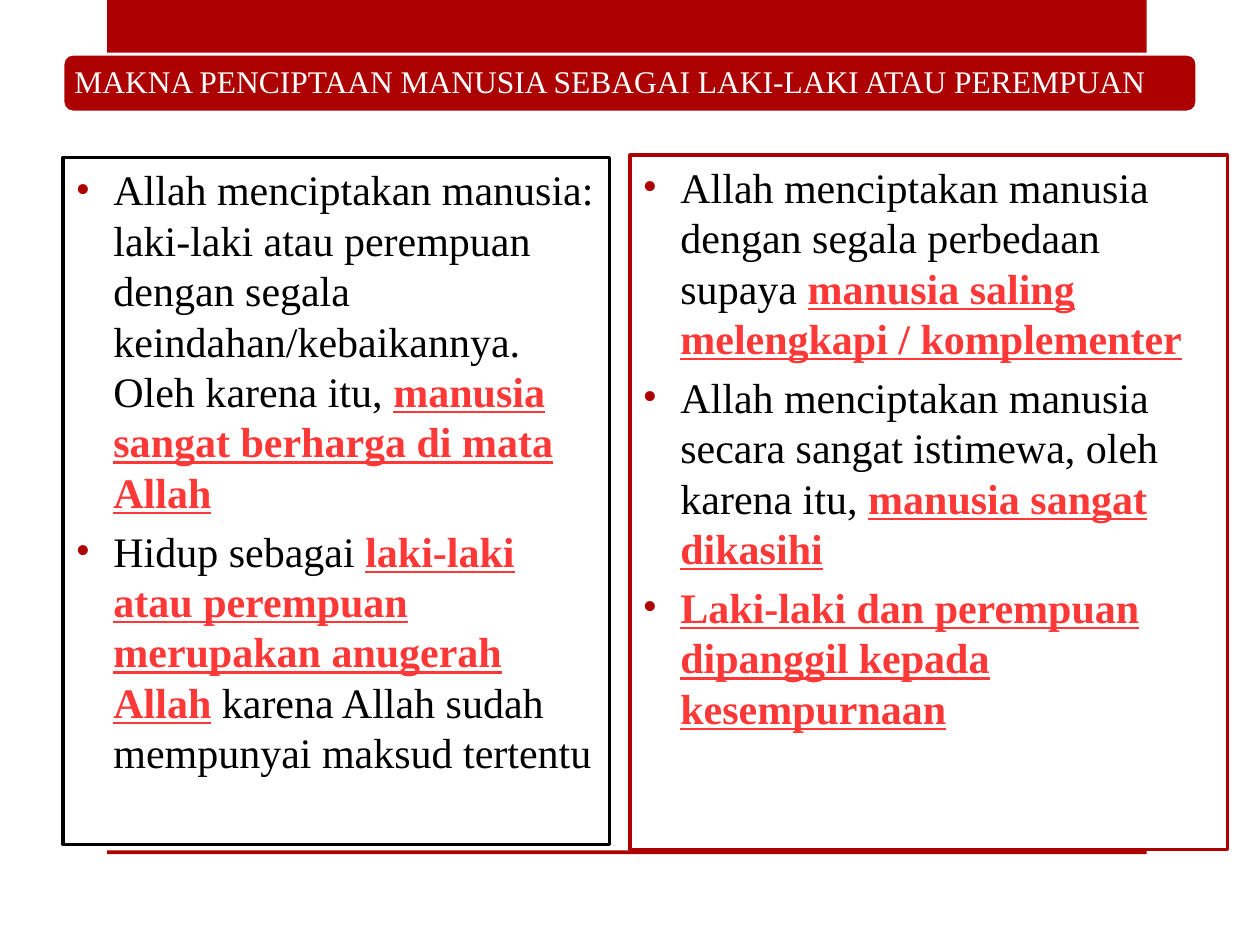
from lxml.etree import SubElement
from pptx import Presentation
from pptx.dml.color import RGBColor
from pptx.enum.shapes import MSO_SHAPE
from pptx.enum.text import MSO_ANCHOR, MSO_AUTO_SIZE, PP_ALIGN
from pptx.oxml.ns import qn
from pptx.util import Inches, Pt

FONT = "Times New Roman"
RED, ACCENT, BLACK, WHITE = "AD0101", "FE3737", "000000", "FFFFFF"


def rgb(value):
    return RGBColor.from_string(value)


def add_run(p, text, size, color, strong=False):
    r = p.add_run()
    r.text = text
    r.font.name = FONT
    r.font.size = Pt(size)
    r.font.color.rgb = rgb(color)
    r.font.bold = r.font.underline = strong


prs = Presentation()
prs.slide_width, prs.slide_height = Inches(10), Inches(7.5)
s = prs.slides.add_slide(prs.slide_layouts.get_by_name("Two Content"))
title, left, right = list(s.placeholders)[:3]
for extra in list(s.placeholders)[3:]:
    extra.element.getparent().remove(extra.element)

# Bars and title banner, placed behind the placeholders
backdrop = [
    (MSO_SHAPE.RECTANGLE, 0.85, 0, 8.25, 0.42),
    (MSO_SHAPE.RECTANGLE, 0.85, 6.75, 8.25, 0.03),
    (MSO_SHAPE.ROUNDED_RECTANGLE, 0.5, 0.43, 9, 0.46),
]
for i, (kind, *box) in enumerate(backdrop):
    sp = s.shapes.add_shape(kind, *map(Inches, box))
    sp.shadow.inherit = False
    sp.fill.solid()
    sp.fill.fore_color.rgb = rgb(RED)
    if kind == MSO_SHAPE.ROUNDED_RECTANGLE:
        sp.line.color.rgb = rgb(WHITE)
        sp.line.width = Pt(1.75)
    else:
        sp.line.fill.background()
    s.shapes.element.insert(2 + i, sp.element)

# Title
title.left, title.top, title.width, title.height = map(Inches, (0.52, 0.45, 8.96, 0.42))
tf = title.text_frame
tf.auto_size = MSO_AUTO_SIZE.NONE
tf.word_wrap = True
tf.vertical_anchor = MSO_ANCHOR.MIDDLE
tf.margin_left = tf.margin_right = tf.margin_top = tf.margin_bottom = Inches(0.07)
p = tf.paragraphs[0]
p.alignment = PP_ALIGN.LEFT
p.line_spacing = 0.9
add_run(p, "MAKNA PENCIPTAAN MANUSIA SEBAGAI LAKI-LAKI ATAU PEREMPUAN", 18, WHITE)

# Two bulleted columns; each run is (text, emphasised)
columns = [
    (left, (0.5, 1.25, 4.34, 5.45), BLACK, [
        [("Allah menciptakan manusia: laki-laki atau perempuan dengan segala "
          "keindahan/kebaikannya. Oleh karena itu, ", False),
         ("manusia sangat berharga di mata Allah", True)],
        [("Hidup sebagai ", False),
         ("laki-laki atau perempuan merupakan anugerah Allah", True),
         (" karena Allah sudah mempunyai maksud tertentu", False)],
    ]),
    (right, (5, 1.23, 4.74, 5.51), RED, [
        [("Allah menciptakan manusia dengan segala perbedaan supaya ", False),
         ("manusia saling melengkapi / komplementer", True)],
        [("Allah menciptakan manusia secara sangat istimewa, oleh karena itu, ", False),
         ("manusia sangat dikasihi", True)],
        [("Laki-laki dan perempuan dipanggil kepada kesempurnaan", True)],
    ]),
]
for sp, box, border, paragraphs in columns:
    sp.left, sp.top, sp.width, sp.height = map(Inches, box)
    sp.fill.solid()
    sp.fill.fore_color.rgb = rgb(WHITE)
    sp.line.color.rgb = rgb(border)
    sp.line.width = Pt(1.75)
    tf = sp.text_frame
    tf.auto_size = MSO_AUTO_SIZE.NONE
    tf.word_wrap = True
    for i, runs in enumerate(paragraphs):
        p = tf.add_paragraph() if i else tf.paragraphs[0]
        p.space_before = Pt(4.8)
        pPr = p._p.get_or_add_pPr()
        pPr.set("marL", str(Inches(0.3)))
        pPr.set("indent", str(-Inches(0.3)))
        SubElement(SubElement(pPr, qn("a:buClr")), qn("a:srgbClr"), val=RED)
        SubElement(pPr, qn("a:buFont"), typeface=FONT)
        SubElement(pPr, qn("a:buChar"), char="•")
        for text, strong in runs:
            add_run(p, text, 24, ACCENT if strong else BLACK, strong)

prs.save("out.pptx")
